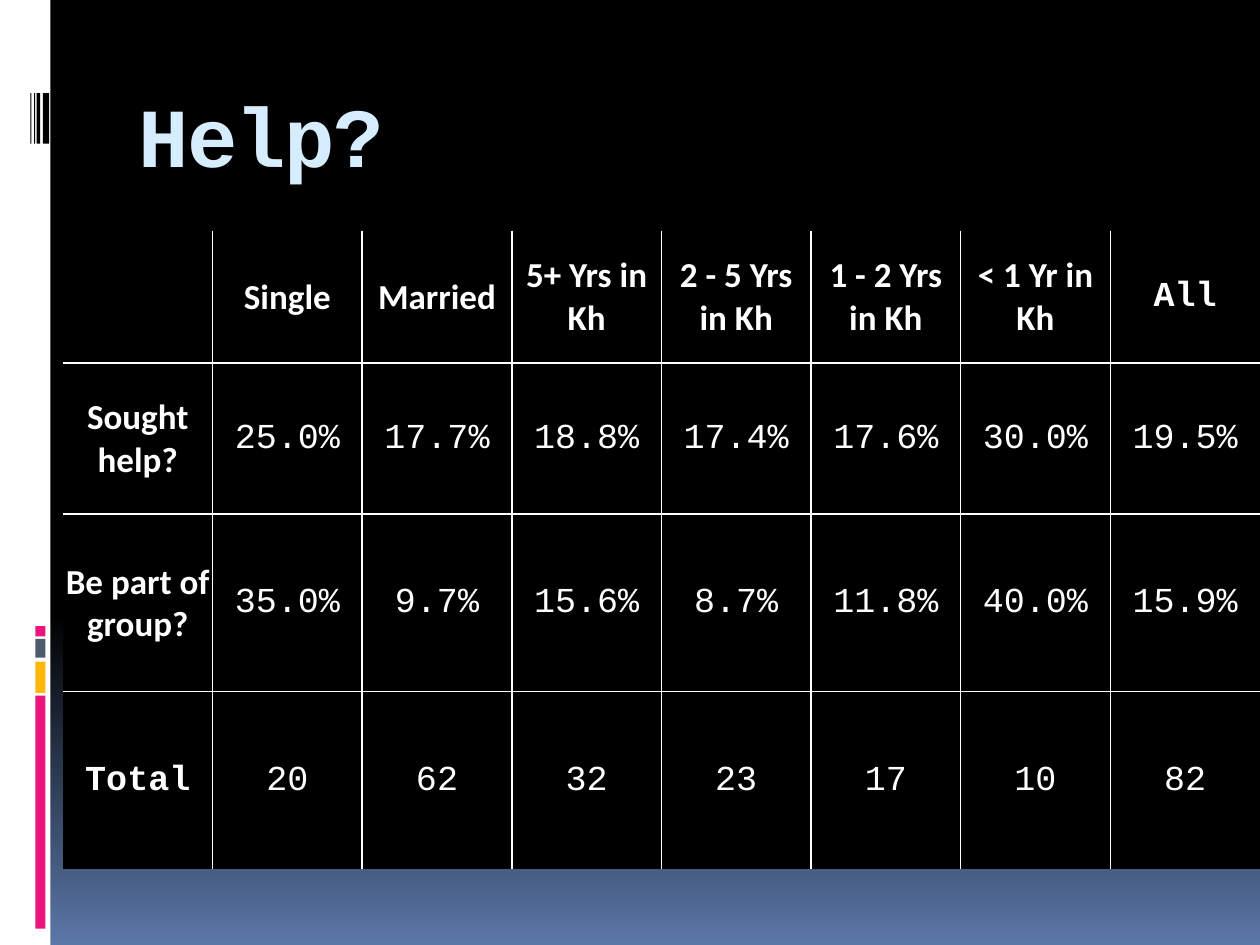
from dataclasses import dataclass

from lxml import etree
from pptx import Presentation
from pptx.dml.color import RGBColor
from pptx.enum.shapes import MSO_SHAPE
from pptx.enum.text import MSO_ANCHOR, PP_ALIGN
from pptx.oxml.ns import qn
from pptx.util import Inches, Pt

RECTANGLE = MSO_SHAPE.RECTANGLE
MIDDLE = MSO_ANCHOR.MIDDLE
LEFT, CENTER = PP_ALIGN.LEFT, PP_ALIGN.CENTER
TITLE_ONLY = 5


@dataclass(frozen=True)
class Theme:
    black: str = "000000"
    white: str = "FFFFFF"
    blue: str = "5B77A8"
    pale_blue: str = "D6ECFF"
    pink: str = "EA157A"
    amber: str = "FEB80A"
    slate: str = "4E5B6F"
    mono: str = "Courier New"
    sans: str = "Calibri"
    title_size: int = 48
    cell_size: int = 20
    rule_width: int = 1


HEADERS = ["", "Single", "Married", "5+ Yrs in Kh", "2 - 5 Yrs in Kh",
           "1 - 2 Yrs in Kh", "< 1 Yr in Kh", "All"]
ROWS = [
    HEADERS,
    ["Sought help?", "25.0%", "17.7%", "18.8%", "17.4%", "17.6%", "30.0%", "19.5%"],
    ["Be part of group?", "35.0%", "9.7%", "15.6%", "8.7%", "11.8%", "40.0%", "15.9%"],
    ["Total", "20", "62", "32", "23", "17", "10", "82"],
]
ROW_HEIGHTS = [1.05, 1.2, 1.41, 1.41]
SUMMARY_LABELS = {"All", "Total"}


class SlideBuilder:
    def __init__(self, page, theme):
        self.page = page
        self.theme = theme

    def background(self):
        fill = self.page.background.fill
        fill.gradient()
        fill.gradient_angle = 270
        stops = [(0.65, self.theme.black), (1, self.theme.blue)]
        for stop, (position, color) in zip(fill.gradient_stops, stops):
            stop.position = position
            stop.color.rgb = RGBColor.from_string(color)

    def bar(self, left, top, width, height, color):
        box = self.page.shapes.add_shape(
            RECTANGLE, Inches(left), Inches(top), Inches(width), Inches(height))
        box.shadow.inherit = False
        box.fill.solid()
        box.fill.fore_color.rgb = RGBColor.from_string(color)
        box.line.fill.background()

    def format_text(self, para, font, size, color, bold, align):
        para.alignment = align
        for span in para.runs:
            span.font.name = font
            span.font.size = Pt(size)
            span.font.bold = bold
            span.font.color.rgb = RGBColor.from_string(color)

    def title(self, text, left, top, width, height):
        box = self.page.shapes.title
        box.left, box.top = Inches(left), Inches(top)
        box.width, box.height = Inches(width), Inches(height)
        frame = box.text_frame
        frame.text = text
        frame.vertical_anchor = MIDDLE
        para = frame.paragraphs[0]
        self.format_text(para, self.theme.mono, self.theme.title_size,
                         self.theme.pale_blue, True, LEFT)
        para.runs[0].font._element.set("spc", "-100")

    def cell_borders(self, cell, edges):
        """Draw a rule on each edge in edges (L, R, T, B) and none on the others."""
        properties = cell._tc.get_or_add_tcPr()
        for edge in "LRTB":
            line = etree.SubElement(properties, qn(f"a:ln{edge}"))
            if edge in edges:
                line.set("w", str(Pt(self.theme.rule_width)))
                fill = etree.SubElement(line, qn("a:solidFill"))
                etree.SubElement(fill, qn("a:srgbClr"), val=self.theme.white)
            else:
                etree.SubElement(line, qn("a:noFill"))

    def table(self, rows, left, top, width, heights):
        row_count, column_count = len(rows), len(rows[0])
        table = self.page.shapes.add_table(
            row_count, column_count, Inches(left), Inches(top),
            Inches(width), Inches(sum(heights))).table
        for column in table.columns:
            column.width = Inches(width / column_count)
        for r, (values, height) in enumerate(zip(rows, heights)):
            table.rows[r].height = Inches(height)
            for c, value in enumerate(values):
                inner = {"L": c > 0, "R": c < column_count - 1,
                         "T": r > 0, "B": r < row_count - 1}
                edges = [edge for edge, shown in inner.items() if shown]
                self.cell(table.cell(r, c), value, r == 0 or c == 0, edges)

    def cell(self, cell, value, is_label, edges):
        self.cell_borders(cell, edges)
        cell.fill.solid()
        cell.fill.fore_color.rgb = RGBColor.from_string(self.theme.black)
        cell.vertical_anchor = MIDDLE
        cell.margin_left = cell.margin_right = cell.margin_top = Inches(0.01)
        cell.margin_bottom = 0
        cell.text_frame.text = value
        sans = is_label and value not in SUMMARY_LABELS
        self.format_text(cell.text_frame.paragraphs[0],
                         self.theme.sans if sans else self.theme.mono,
                         self.theme.cell_size, self.theme.white, is_label, CENTER)


def main():
    deck = Presentation()
    deck.slide_width, deck.slide_height = Inches(10), Inches(7.5)
    theme = Theme()
    builder = SlideBuilder(deck.slides.add_slide(deck.slide_layouts[TITLE_ONLY]), theme)

    builder.background()
    builder.bar(0, 0, 0.4, 7.5, theme.white)
    for top, height, color in [(5.52, 1.85, theme.pink), (5.25, 0.25, theme.amber),
                               (5.07, 0.15, theme.slate), (4.97, 0.08, theme.pink)]:
        builder.bar(0.28, top, 0.08, height, color)
    for left, width in [(0.34, 0.05), (0.29, 0.03), (0.27, 0.01), (0.24, 0.01)]:
        builder.bar(left, 0.74, width, 0.4, theme.black)
    builder.title("Help?", 1, 0.56, 8.5, 1)
    builder.table(ROWS, 0.5, 1.83, 9.5, ROW_HEIGHTS)

    deck.save("out.pptx")


if __name__ == "__main__":
    main()
